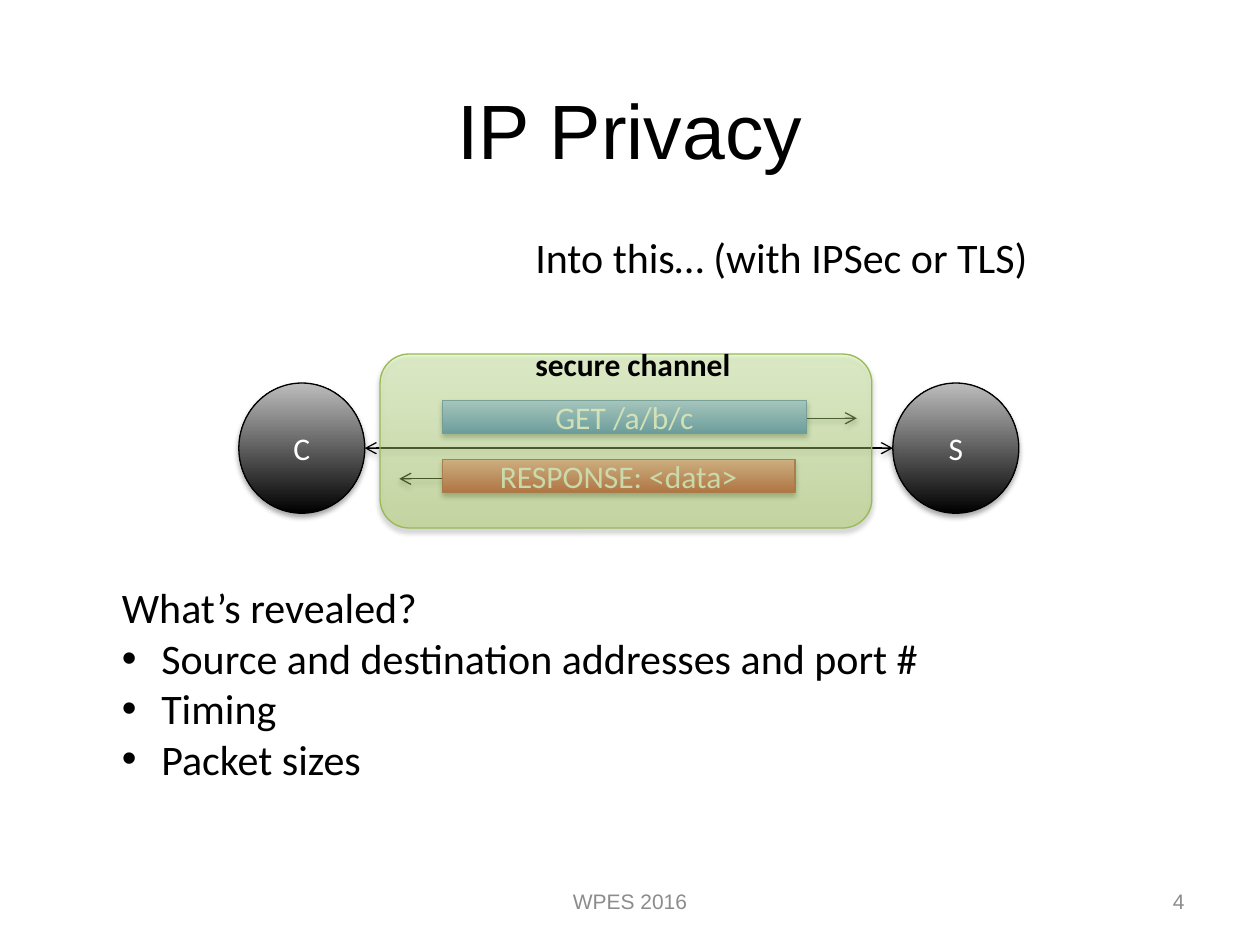
from lxml.etree import SubElement
from pptx import Presentation
from pptx.dml.color import RGBColor
from pptx.enum.shapes import MSO_CONNECTOR as CONN, MSO_SHAPE as SHAPE
from pptx.enum.text import MSO_ANCHOR as ANCHOR, PP_ALIGN as ALIGN
from pptx.oxml.ns import qn
from pptx.util import Pt

BLACK, WHITE, GRAY = "000000", "FFFFFF", "8C8C8C"


def rgb(value):
    return RGBColor.from_string(value)


def format_text(tf, size, color, font="Calibri", align=ALIGN.LEFT, bold=False):
    for p in tf.paragraphs:
        p.alignment = align
        for r in p.runs:
            r.font.size = Pt(size)
            r.font.name = font
            r.font.bold = bold
            r.font.color.rgb = rgb(color)


def add_shadow(s):
    effects = SubElement(s._element.spPr, qn("a:effectLst"))
    shadow = SubElement(effects, qn("a:outerShdw"), blurRad=str(Pt(3.1)),
                        dist=str(Pt(1.8)), dir="5400000", rotWithShape="0")
    color = SubElement(shadow, qn("a:srgbClr"), val=BLACK)
    SubElement(color, qn("a:alpha"), val="35000")


def outline(s, color):
    s.line.color.rgb = rgb(color)
    s.line.width = Pt(0.75)


def add_arrow(slide, start, end, ends, kind=CONN.STRAIGHT):
    s = slide.shapes.add_connector(kind, *map(Pt, start + end))
    outline(s, BLACK)
    for name in ends:
        SubElement(s.line._get_or_add_ln(), qn(f"a:{name}"), type="arrow")
    add_shadow(s)


def add_node(slide, kind, box, colors, line, text="", opacity=100):
    s = slide.shapes.add_shape(kind, *map(Pt, box))
    s.fill.gradient()
    s.fill.gradient_angle = 90
    for stop, color in zip(s.fill.gradient_stops, colors):
        stop.color.rgb = rgb(color)
    if opacity < 100:
        for color in s._element.spPr.iter(qn("a:srgbClr")):
            SubElement(color, qn("a:alpha"), val=str(opacity * 1000))
    outline(s, line)
    add_shadow(s)
    tf = s.text_frame
    tf.text = text
    tf.vertical_anchor = ANCHOR.MIDDLE
    format_text(tf, 18, WHITE, align=ALIGN.CENTER)


def add_label(slide, box, text, size, bold=False):
    tf = slide.shapes.add_textbox(*map(Pt, box)).text_frame
    tf.word_wrap = False
    tf.text = text
    format_text(tf, size, BLACK, bold=bold)
    return tf


def add_footer(slide, box, text, align):
    tf = slide.shapes.add_textbox(*map(Pt, box)).text_frame
    tf.word_wrap = True
    tf.vertical_anchor = ANCHOR.MIDDLE
    tf.text = text
    format_text(tf, 12, GRAY, "Arial", align)


def add_bullet(p):
    pPr = p._p.get_or_add_pPr()
    pPr.set("marL", str(Pt(22.5)))
    pPr.set("indent", str(Pt(-22.5)))
    SubElement(pPr, qn("a:buFont"), typeface="Arial")
    SubElement(pPr, qn("a:buChar"), char="•")


def add_title(slide, text):
    s = slide.shapes.title
    s.left, s.top, s.width, s.height = map(Pt, (36, 28.8, 648, 90))
    s.text_frame.text = text
    s.text_frame.vertical_anchor = ANCHOR.MIDDLE
    format_text(s.text_frame, 44, BLACK, "Arial", ALIGN.CENTER)


def main():
    prs = Presentation()
    prs.slide_width, prs.slide_height = Pt(720), Pt(540)
    slide = prs.slides.add_slide(prs.slide_layouts[5])

    add_title(slide, "IP Privacy")
    add_footer(slide, (246, 500.5, 228, 28.75), "WPES 2016", ALIGN.CENTER)
    add_footer(slide, (516, 500.5, 168, 28.75), "4", ALIGN.RIGHT)

    add_arrow(slide, (252.7, 239), (489.6, 239), ["tailEnd"])
    add_arrow(slide, (228.2, 273.6), (454.3, 273.6), ["headEnd"])
    for left, name in ((136.5, "C"), (510.2, "S")):
        add_node(slide, SHAPE.OVAL, (left, 218.9, 72, 74.4),
                 (BLACK, "BDBDBD"), BLACK, name)
    add_arrow(slide, (208.4, 256.1), (510.2, 256.1),
              ["headEnd", "tailEnd"], CONN.ELBOW)

    add_node(slide, SHAPE.RECTANGLE, (252.7, 229, 208.2, 18.7),
             ("3F80CE", "A4C4FF"), "4B7EBC", "GET /a/b/c")
    add_node(slide, SHAPE.RECTANGLE, (252.7, 262.8, 201.6, 18.7),
             ("D1403C", "FFA6A5"), "BF4C48", "RESPONSE: <data>")
    add_node(slide, SHAPE.ROUNDED_RECTANGLE, (217.2, 202.3, 281, 99.4),
             ("A0CA4A", "DAFFA5"), "98B955", opacity=40)

    add_label(slide, (298.8, 193.7, 127.4, 29), "secure channel", 18, True)
    add_label(slide, (298.8, 129, 304.6, 36),
              "Into this… (with IPSec or TLS)", 24)
    tf = add_label(slide, (62.6, 329, 475.2, 123.8),
                   "What’s revealed?\n"
                   "Source and destination addresses and port #\n"
                   "Timing\n"
                   "Packet sizes", 24)
    for p in tf.paragraphs[1:]:
        add_bullet(p)

    prs.save("out.pptx")


if __name__ == "__main__":
    main()
